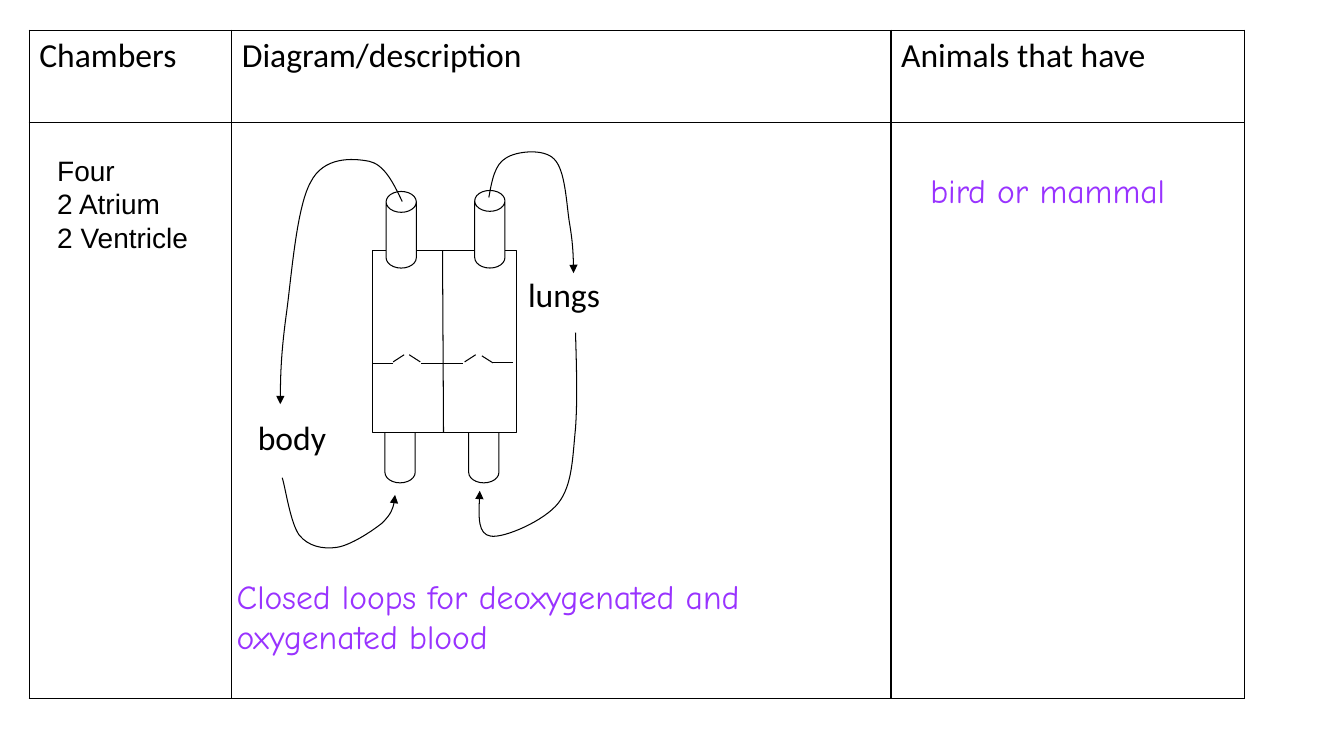
import pptx
import pptx.dml.color
import pptx.enum.shapes
import pptx.enum.text
import pptx.oxml
import pptx.oxml.ns
import pptx.util
from lxml import etree

Pt = pptx.util.Pt
qn = pptx.oxml.ns.qn
SHAPE = pptx.enum.shapes.MSO_SHAPE

COLOURS = {"ink": "000000", "paper": "FFFFFF", "answer": "9933FF"}
OUTLINE = 0.75

HEADINGS = ["Chambers", "Diagram/description", "Animals that have"]
COLUMN_WIDTHS = [144.7, 470.9, 252.7]
ROW_HEIGHTS = [66.2, 411.1]

LOWER_VESSELS = [(275, 290.2, 21.6, 54.7), (334.8, 290.2, 21.6, 54.7)]
UPPER_VESSELS = [(275.8, 136.8, 21.6, 54.7), (339.1, 136.1, 21.6, 55.4)]
CHAMBERS = (266.4, 178.6, 102.2, 130.3)

SEPTUM_AND_VALVES = [
    (316.8, 308.9, 316.1, 178.6),
    (301, 259.9, 330.5, 259.9),
    (280.8, 259.9, 265.7, 259.9),
    (366.5, 259.2, 352.1, 259.2),
    (280.8, 258.5, 288.7, 253.4),
    (331.9, 258.5, 339.8, 253.4),
    (352.1, 259.2, 344.2, 254.2),
    (300.2, 258.5, 292.3, 253.4),
]

# Each flow is a start point followed by Bézier triples.
BLOOD_FLOWS = [
    [(287.3, 144), (280.8, 130.3), (274.3, 117.4), (263.5, 115.2),
     (252, 113), (231.1, 111.6), (221.8, 130.3),
     (211.7, 148.3), (208.1, 198.7), (204.5, 224.6),
     (200.9, 251.3), (200.2, 270), (200.2, 288.7)],
    [(201.6, 341.3), (203.8, 347.8), (207.4, 373.7), (213.8, 382.3),
     (220.3, 390.2), (230.4, 392.4), (240.5, 391),
     (250.6, 389.5), (265.7, 379.4), (272.9, 373.7),
     (279.4, 367.2), (282.2, 360), (282.2, 353.5)],
    [(349.2, 141.1), (351.4, 128.9), (353.5, 117.4), (361.4, 113),
     (368.6, 108), (388.8, 105.8), (396, 113.8),
     (403.9, 121.7), (404.6, 145.4), (406.8, 159.1),
     (409, 172.1), (409.7, 183.6), (409.7, 195.1)],
    [(411.1, 237.6), (411.8, 261.4), (412.6, 285.1), (411.1, 306),
     (409, 326.2), (409, 346.3), (398.9, 359.3),
     (388.8, 372.2), (360, 384.5), (350.6, 383),
     (341.3, 381.6), (342, 366.5), (342.7, 350.6)],
]


def rgb(colour):
    return pptx.dml.color.RGBColor.from_string(COLOURS[colour])


def write(frame, text, font="Calibri", size=24, colour="ink", after=None):
    """Fill a text frame, one paragraph per line of text."""
    for index, line in enumerate(text.split("\n")):
        paragraph = frame.add_paragraph() if index else frame.paragraphs[0]
        if after is not None:
            paragraph.space_after = Pt(after)
        run = paragraph.add_run()
        run.text = line
        run.font.name = font
        run.font.size = Pt(size)
        run.font.color.rgb = rgb(colour)


def add_label(slide, box, text, wrap=True, grow=False, **text_format):
    frame = slide.shapes.add_textbox(*map(Pt, box)).text_frame
    frame.word_wrap = wrap
    if grow:
        frame.auto_size = pptx.enum.text.MSO_AUTO_SIZE.SHAPE_TO_FIT_TEXT
    write(frame, text, **text_format)


def set_outline(line):
    line.color.rgb = rgb("ink")
    line.width = Pt(OUTLINE)


def add_solid(slide, kind, box, rim=None):
    solid = slide.shapes.add_shape(kind, *map(Pt, box))
    solid.shadow.inherit = False
    solid.fill.solid()
    solid.fill.fore_color.rgb = rgb("paper")
    set_outline(solid.line)
    if rim is not None:
        solid.adjustments[0] = rim


def add_wall(slide, ends):
    wall = slide.shapes.add_connector(
        pptx.enum.shapes.MSO_CONNECTOR.STRAIGHT, *map(Pt, ends))
    set_outline(wall.line)
    etree.SubElement(wall._element.spPr, qn("a:effectLst"))


def add_flow(slide, points):
    """Draw a Bézier curve with an arrowhead at its end."""
    start, *rest = [(Pt(x), Pt(y)) for x, y in points]
    builder = slide.shapes.build_freeform(*start)
    builder.add_line_segments(rest, close=False)
    flow = builder.convert_to_shape()
    flow.shadow.inherit = False
    flow.fill.background()
    set_outline(flow.line)
    etree.SubElement(flow.line._get_or_add_ln(), qn("a:tailEnd"), type="triangle")

    outline = next(flow._element.iter(qn("a:path")))
    segments = outline.findall(qn("a:lnTo"))
    for first in range(0, len(segments), 3):
        curve = etree.SubElement(outline, qn("a:cubicBezTo"))
        for segment in segments[first:first + 3]:
            curve.append(segment[0])
            outline.remove(segment)


def add_borders(cell):
    properties = cell._tc.get_or_add_tcPr()
    for side in ("lnL", "lnR", "lnT", "lnB"):
        border = etree.SubElement(properties, qn(f"a:{side}"), w=str(Pt(1)))
        paint = etree.SubElement(border, qn("a:solidFill"))
        etree.SubElement(paint, qn("a:srgbClr"), val=COLOURS["ink"])


def add_heart_table(slide):
    table = slide.shapes.add_table(
        len(ROW_HEIGHTS), len(COLUMN_WIDTHS), Pt(20.9), Pt(21.6),
        Pt(sum(COLUMN_WIDTHS)), Pt(sum(ROW_HEIGHTS))).table
    table.first_row = False
    table.horz_banding = False
    for column, width in zip(table.columns, COLUMN_WIDTHS):
        column.width = Pt(width)
    for row, height in zip(table.rows, ROW_HEIGHTS):
        row.height = Pt(height)
    for cell in table.iter_cells():
        add_borders(cell)
        cell.fill.background()
    for column, heading in enumerate(HEADINGS):
        write(table.cell(0, column).text_frame, heading)


def add_heart(slide):
    for box in LOWER_VESSELS:
        add_solid(slide, SHAPE.CAN, box, rim=0.69)
    add_solid(slide, SHAPE.FLOWCHART_PROCESS, CHAMBERS)
    for box in UPPER_VESSELS:
        add_solid(slide, SHAPE.CAN, box, rim=0.69)
    for ends in SEPTUM_AND_VALVES:
        add_wall(slide, ends)
    for points in BLOOD_FLOWS:
        add_flow(slide, points)
    add_label(slide, (177.1, 294.5, 105.1, 60.5), "body", after=10)
    add_label(slide, (370.1, 192.2, 105.1, 60.5), "lungs", after=10)


def main():
    deck = pptx.Presentation()
    deck.slide_width, deck.slide_height = Pt(960), Pt(540)
    slide = deck.slides.add_slide(deck.slide_layouts[6])
    add_heart_table(slide)
    add_heart(slide)
    add_label(slide, (33.8, 105.8, 129.6, 101.5), "Four\n2 Atrium\n2 Ventricle",
              wrap=False, grow=True, font="Arial", size=20)
    answer = {"grow": True, "font": "Comic Neue", "colour": "answer"}
    add_label(slide, (162, 407.5, 486, 65.5),
              "Closed loops for deoxygenated and oxygenated blood", **answer)
    add_label(slide, (657.4, 118.1, 257.8, 36), "bird or mammal", **answer)
    deck.save("out.pptx")


if __name__ == "__main__":
    main()
